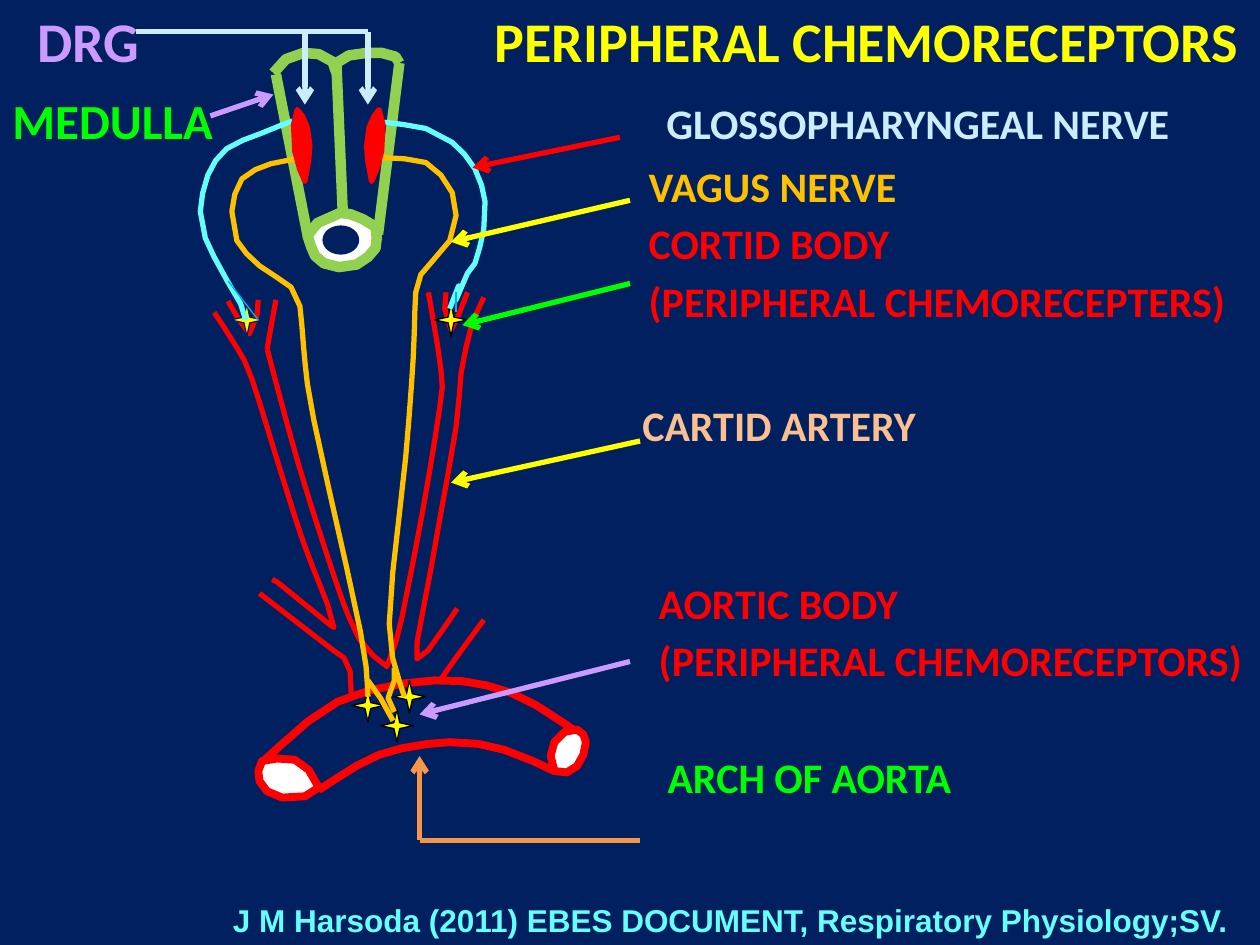
import math
import pptx
import pptx.util
import pptx.dml.color
import pptx.enum.shapes
import pptx.enum.text
import pptx.oxml.ns
import lxml.etree
from pptx.util import Inches

qn = pptx.oxml.ns.qn
rgb = pptx.dml.color.RGBColor.from_string
MSO = pptx.enum.shapes.MSO_SHAPE
NAVY, WHITE, RED, GREEN, YELLOW = "002060", "FFFFFF", "FF0000", "00FF00", "FFFF00"
LIME, AMBER, CYAN, LILAC, ICE, ORANGE = "92D050", "FFC000", "66FFFF", "CC99FF", "CCECFF", "F79646"

deck = pptx.Presentation()
deck.slide_width, deck.slide_height = Inches(10), Inches(7.5)
slide = deck.slides.add_slide(deck.slide_layouts[6])


def curve(color, weight, knots, fill=None):
    closed = fill is not None
    count = len(knots)
    samples = []
    for i in range(count if closed else count - 1):
        if closed:
            near = [knots[(i + k) % count] for k in (-1, 0, 1, 2)]
        else:
            near = [knots[min(max(i + k, 0), count - 1)] for k in (-1, 0, 1, 2)]
        steps = min(3, 1 + int(math.dist(near[1], near[2]) / 0.25))
        for step in range(1, steps + 1):
            t = step / steps
            samples.append([
                Inches(b + ((c - a) * t + (2 * a - 5 * b + 4 * c - d) * t ** 2
                            + (3 * b - a - 3 * c + d) * t ** 3) / 2)
                for a, b, c, d in zip(*near)])
    builder = slide.shapes.build_freeform(Inches(knots[0][0]), Inches(knots[0][1]), 1.0)
    builder.add_line_segments(samples, close=closed)
    outline = builder.convert_to_shape()
    outline.shadow.inherit = False
    if closed:
        outline.fill.solid()
        outline.fill.fore_color.rgb = rgb(fill)
    else:
        outline.fill.background()
    outline.line.color.rgb = rgb(color)
    outline.line.width = pptx.util.Pt(weight)


def straight(color, weight, x1, y1, x2, y2, arrow=False):
    line = slide.shapes.add_connector(
        pptx.enum.shapes.MSO_CONNECTOR.STRAIGHT, Inches(x1), Inches(y1), Inches(x2), Inches(y2))
    line.line.color.rgb = rgb(color)
    line.line.width = pptx.util.Pt(weight)
    if arrow:
        lxml.etree.SubElement(line.line._get_or_add_ln(), qn("a:tailEnd"), type="arrow")
    lxml.etree.SubElement(line._element.spPr, qn("a:effectLst"))


labels = slide.shapes.add_shape(MSO.RECTANGLE, 0, 0, deck.slide_width, deck.slide_height)
labels.shadow.inherit = False
labels.fill.solid()
labels.fill.fore_color.rgb = rgb(NAVY)
labels.line.fill.background()
frame = labels.text_frame
frame.word_wrap = True
frame.margin_right = 0
frame.vertical_anchor = pptx.enum.text.MSO_ANCHOR.TOP

label_rows = [
    (0, 0, (0.2, 3.83), [("\tDRG", 32, LILAC), ("\tPERIPHERAL CHEMORECEPTORS", 32, YELLOW)]),
    (10, 0, (5.19,), [("MEDULLA", 28, GREEN), ("\tGLOSSOPHARYNGEAL NERVE", 24, ICE)]),
    (6, 5.05, (), [("VAGUS NERVE", 24, AMBER)]),
    (4, 5.05, (), [("CORTID BODY", 24, RED)]),
    (4, 5.05, (), [("(PERIPHERAL CHEMORECEPTERS)", 24, RED)]),
    (42.5, 5, (), [("CARTID ARTERY", 24, "FAC090")]),
    (72.5, 5.13, (), [("AORTIC BODY", 24, RED)]),
    (4, 5.13, (), [("(PERIPHERAL CHEMORECEPTORS)", 24, RED)]),
    (38, 5.2, (), [("ARCH OF AORTA", 24, GREEN)]),
]
for row, (gap, indent, stops, pieces) in enumerate(label_rows):
    label = frame.add_paragraph() if row else frame.paragraphs[0]
    label.alignment = pptx.enum.text.PP_ALIGN.LEFT
    properties = label._p.get_or_add_pPr()
    properties.set("marL", str(Inches(indent)))
    if stops:
        tabs = lxml.etree.SubElement(properties, qn("a:tabLst"))
        for stop in stops:
            lxml.etree.SubElement(tabs, qn("a:tab"), pos=str(Inches(stop)), algn="l")
    label.space_before = pptx.util.Pt(gap)
    for words, size, color in pieces:
        run = label.add_run()
        run.text = words
        run.font.name = "Calibri"
        run.font.size = pptx.util.Pt(size)
        run.font.bold = True
        run.font.color.rgb = rgb(color)

aorta_walls = [
    [(2.08, 6.05), (2.68, 5.57), (3.45, 5.4), (4.06, 5.5), (4.58, 5.81)],
    [(2.53, 6.27), (3.01, 5.99), (3.57, 5.89), (4, 5.95), (4.4, 6.12)],
]
arteries = [
    [(2.12, 2.77), (2.37, 3.69), (2.65, 4.57), (2.77, 4.9), (2.85, 5.07), (3.07, 5.29),
     (3.14, 5.1), (3.19, 4.9), (3.35, 4.08), (3.49, 3.23), (3.5, 2.94), (3.4, 2.32)],
    [(3.84, 2.36), (3.75, 2.56), (3.66, 2.96), (3.62, 3.39), (3.42, 4.52), (3.31, 5.23),
     (3.63, 4.83)],
    [(1.7, 2.48), (1.88, 2.76), (2, 3.01), (2.23, 3.75), (2.41, 4.31), (2.6, 4.8),
     (2.65, 4.98), (2.62, 4.96), (2.2, 4.62), (2.16, 4.6)],
    [(2.06, 4.71), (2.67, 5.18), (2.73, 5.22), (2.78, 5.33), (2.79, 5.54)],
    [(3.84, 4.92), (3.62, 5.22), (3.5, 5.39)],
    [(1.81, 2.39), (1.98, 2.65), (2.04, 2.5), (2.05, 2.38)],
    [(3.54, 2.32), (3.53, 2.45), (3.58, 2.62), (3.71, 2.32)],
    [(2.19, 2.38), (2.15, 2.6), (2.12, 2.77)],
]
for weight, vessels in ((4.5, aorta_walls), (3, arteries)):
    for vessel in vessels:
        curve(RED, weight, vessel)

aorta_openings = [
    [(2.08, 6.04), (2.2, 6.02), (2.34, 6.03), (2.45, 6.11), (2.53, 6.25), (2.42, 6.32),
     (2.24, 6.33), (2.12, 6.28), (2.06, 6.2), (2.05, 6.12)],
    [(4.58, 5.79), (4.48, 5.81), (4.4, 5.89), (4.37, 6), (4.4, 6.12), (4.5, 6.13),
     (4.58, 6.08), (4.63, 5.99), (4.65, 5.89), (4.63, 5.83)],
]
for opening in aorta_openings:
    curve(RED, 4.5, opening, WHITE)

for edge in ((2.44, 1.86, 2.19, 0.59), (3, 1.86, 3.17, 0.5), (2.72, 1.67, 2.67, 0.5)):
    straight(LIME, 6, *edge)
curve(LIME, 6, [(2.44, 1.87), (2.52, 1.77), (2.7, 1.69), (2.78, 1.7), (2.88, 1.74), (2.98, 1.8),
                (2.99, 1.89), (2.98, 1.97), (2.92, 2.04), (2.83, 2.1), (2.69, 2.12),
                (2.57, 2.09), (2.5, 2.03), (2.47, 1.96)], WHITE)

bodies = [(MSO.FLOWCHART_CONNECTOR, 2.58, 1.81, 0.25, 0.19, NAVY, NAVY, 3)]
for x, y, edge in ((3.45, 2.41, "000000"), (1.83, 2.41, NAVY), (2.79, 5.47, "000000"),
                   (3.12, 5.4, "000000"), (3.02, 5.63, "000000")):
    bodies.append((MSO.STAR_4_POINT, x, y, 0.26, 0.26, YELLOW, edge, 0.75))
for kind, x, y, width, height, fill, edge, weight in bodies:
    body = slide.shapes.add_shape(kind, Inches(x), Inches(y), Inches(width), Inches(height))
    body.shadow.inherit = False
    if kind == MSO.STAR_4_POINT:
        body.adjustments[0] = 0.125
    body.fill.solid()
    body.fill.fore_color.rgb = rgb(fill)
    body.line.color.rgb = rgb(edge)
    body.line.width = pptx.util.Pt(weight)

vagus = [
    [(2.35, 1.26), (2.15, 1.3), (1.92, 1.42), (1.84, 1.68), (1.88, 1.91), (2.06, 2.11),
     (2.31, 2.28), (2.38, 2.43), (2.41, 2.76), (2.49, 3.33), (2.86, 5.01), (2.92, 5.53)],
    [(3.02, 1.25), (3.21, 1.26), (3.38, 1.29), (3.5, 1.39), (3.59, 1.53), (3.62, 1.71),
     (3.57, 1.91), (3.46, 2.04), (3.34, 2.18), (3.3, 2.32), (3.28, 2.84), (3.22, 3.63),
     (3.09, 4.95), (3.21, 5.53)],
    [(2.92, 5.4), (3.02, 5.54), (3.12, 5.72)],
    [(3.13, 5.3), (3.13, 5.4), (3.08, 5.54), (3.13, 5.65)],
]
glossopharyngeal = [
    [(2.32, 0.96), (2.07, 1.06), (1.8, 1.18), (1.65, 1.39), (1.59, 1.68), (1.63, 1.89),
     (1.7, 2.04), (1.81, 2.24), (1.91, 2.41), (1.95, 2.54)],
    [(3.05, 0.97), (3.38, 1.02), (3.59, 1.13), (3.77, 1.34), (3.85, 1.6), (3.84, 1.82),
     (3.77, 2.09), (3.71, 2.17), (3.62, 2.38), (3.64, 2.27), (3.57, 2.45)],
]
for color, nerves in ((AMBER, vagus), (CYAN, glossopharyngeal)):
    for nerve in nerves:
        curve(color, 3, nerve)
for twig in ((1.81, 2.23, 2.05, 2.54), (3.62, 2.32, 3.62, 2.48)):
    straight("00B0F0", 0.75, *twig)

nucleus = [(2.33, 0.99), (2.34, 1.2), (2.42, 1.44), (2.45, 1.28), (2.46, 1.16), (2.44, 1.01),
           (2.4, 0.92), (2.36, 0.87)]
curve(RED, 3, nucleus, RED)
curve(RED, 3, [(5.37 - x, y) for x, y in nucleus], RED)
for rim in ([(2.17, 0.58), (2.27, 0.47), (2.41, 0.42), (2.53, 0.43), (2.64, 0.49), (2.67, 0.58)],
            [(2.67, 0.5), (2.77, 0.44), (2.91, 0.42), (3.03, 0.42), (3.14, 0.45), (3.17, 0.5)]):
    curve(LIME, 6, rim)

pointers = [
    (RED, 4.92, 1.09, 3.75, 1.33, True),
    (YELLOW, 5, 1.59, 3.58, 1.92, True),
    (GREEN, 5, 2.25, 3.67, 2.58, True),
    (YELLOW, 5.08, 3.5, 3.58, 3.83, True),
    (LILAC, 5, 5.25, 3.33, 5.67, True),
    (ORANGE, 3.33, 6.67, 3.33, 6, True),
    (ORANGE, 3.33, 6.67, 5.08, 6.67, False),
    (LILAC, 1.67, 0.92, 2.17, 0.75, True),
    (ICE, 1.08, 0.25, 2.92, 0.25, False),
    (ICE, 2.42, 0.25, 2.42, 0.83, True),
    (ICE, 2.92, 0.25, 2.92, 0.83, True),
]
for color, *ends, arrow in pointers:
    straight(color, 3, *ends, arrow)

citation = slide.shapes.add_textbox(Inches(1.75), Inches(7.1), Inches(8.25), Inches(0.4)).text_frame
citation.word_wrap = True
citation.text = "J M Harsoda (2011) EBES DOCUMENT, Respiratory Physiology;SV."
credit = citation.paragraphs[0].runs[0].font
credit.name = "Arial"
credit.size = pptx.util.Pt(18)
credit.bold = True
credit.color.rgb = rgb(CYAN)

deck.save("out.pptx")
